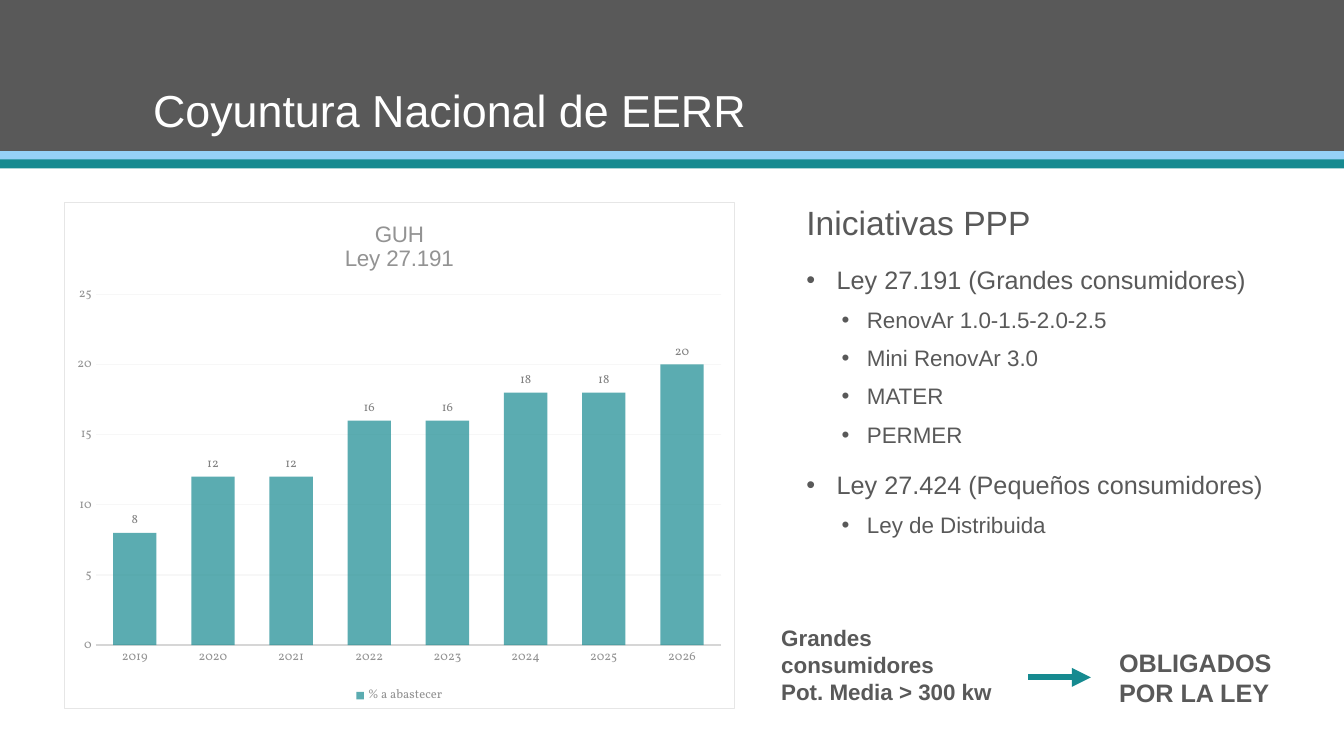
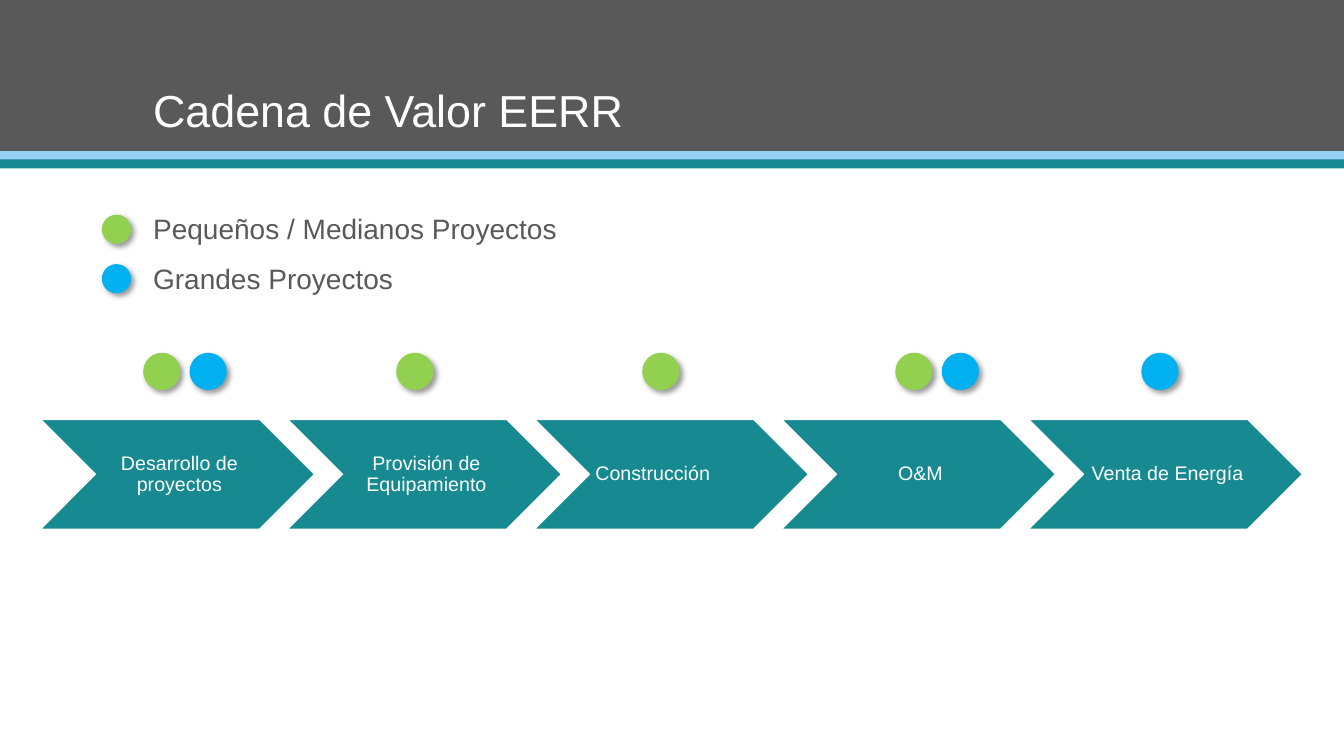
from dataclasses import dataclass

from lxml import etree
from pptx import Presentation
from pptx.chart.data import CategoryChartData
from pptx.dml.color import RGBColor
from pptx.enum import chart as ch, shapes, text
from pptx.oxml.ns import qn
from pptx.util import Inches, Pt


@dataclass(frozen=True)
class Theme:
    gray: str = "595959"
    sky: str = "95D1F7"
    teal: str = "168A90"
    white: str = "FFFFFF"
    green: str = "92D050"
    blue: str = "00B0F0"
    black: str = "000000"
    axis_text: str = "939393"
    label_text: str = "828282"
    axis_line: str = "D6D6D6"
    grid: str = "F7F7F7"
    border: str = "E6E6E6"
    font: str = "Arial"
    chart_font: str = "Vollkorn"
    title: int = 32
    heading: int = 24
    legend: int = 20
    body: int = 18
    detail: int = 16
    step: int = 14
    chart: int = 9


T = Theme()


def rgb(color):
    return RGBColor.from_string(color)


def sub(parent, tag, **attrs):
    return etree.SubElement(parent, qn(tag), {k: str(v) for k, v in attrs.items()})


def style_font(font, size, color, name=T.chart_font, bold=False):
    font.size, font.name, font.bold = Pt(size), name, bold
    font.color.rgb = rgb(color)


def style_line(line, color, width):
    line.color.rgb = rgb(color)
    line.width = Pt(width)


def write(tf, value, size=T.body, color=T.gray, bold=False, align=None,
          spacing=None, before=None, indent=None):
    p = tf.paragraphs[0]
    if p.runs:
        p = tf.add_paragraph()
    p.alignment = align
    p.line_spacing = spacing
    if before is not None:
        p.space_before = Pt(before)
    if indent:
        left, hanging = indent
        pPr = p._p.get_or_add_pPr()
        pPr.set("marL", str(Inches(left)))
        pPr.set("indent", str(Inches(-hanging)))
        sub(pPr, "a:buFont", typeface=T.font)
        sub(pPr, "a:buChar", char="•")
    r = p.add_run()
    r.text = value
    style_font(r.font, size, color, T.font, bold)


class Deck:
    def __init__(self):
        self.prs = Presentation()
        self.prs.slide_width = Inches(13.33)
        self.prs.slide_height = Inches(7.5)
        self.s = None

    def slide(self, title):
        self.s = self.prs.slides.add_slide(self.prs.slide_layouts[6])
        for top, height, color in ((0, 1.5, T.gray), (1.5, 0.09, T.sky),
                                   (1.58, 0.09, T.teal)):
            self.shape(shapes.MSO_SHAPE.RECTANGLE, 0, top, 13.33, height, color)
        tf = self.box(1.42, 0.28, 10.5, 1.13)
        tf.vertical_anchor = text.MSO_ANCHOR.BOTTOM
        write(tf, title, size=T.title, color=T.white, spacing=0.9)

    def shape(self, kind, x, y, w, h, fill, line=None):
        sp = self.s.shapes.add_shape(kind, Inches(x), Inches(y), Inches(w), Inches(h))
        sp.shadow.inherit = False
        sp.fill.solid()
        sp.fill.fore_color.rgb = rgb(fill)
        if line:
            style_line(sp.line, line, 1)
        else:
            sp.line.fill.background()
        return sp

    def box(self, x, y, w, h):
        tf = self.s.shapes.add_textbox(
            Inches(x), Inches(y), Inches(w), Inches(h)).text_frame
        tf.word_wrap = True
        return tf

    def dot(self, x, y, size, color):
        sp = self.shape(shapes.MSO_SHAPE.OVAL, x, y, size, size, color)
        effects = sp._element.spPr.find(qn("a:effectLst"))
        shadow = sub(effects, "a:outerShdw", blurRad=Pt(4), dist=Pt(3),
                     dir=45 * 60000, algn="tl", rotWithShape=0)
        sub(sub(shadow, "a:srgbClr", val=T.black), "a:alpha", val=40000)

    def chevron(self, x, y, w, h, label, align):
        sp = self.shape(shapes.MSO_SHAPE.CHEVRON, x, y, w, h, T.teal, T.white)
        tf = sp.text_frame
        tf.word_wrap = True
        tf.vertical_anchor = text.MSO_ANCHOR.MIDDLE
        tf.margin_left = Inches(0.06)
        tf.margin_right = tf.margin_top = tf.margin_bottom = Inches(0.02)
        write(tf, label, size=T.step, color=T.white, align=align, spacing=0.9)

    def arrow(self, x1, x2, y):
        c = self.s.shapes.add_connector(
            shapes.MSO_CONNECTOR.STRAIGHT, Inches(x1), Inches(y), Inches(x2), Inches(y))
        style_line(c.line, T.teal, 4.5)
        sub(c.line._get_or_add_ln(), "a:tailEnd", type="triangle")
        sub(c._element.spPr, "a:effectLst")

    def columns(self, x, y, w, h, title, name, cats, vals):
        data = CategoryChartData()
        data.categories = cats
        data.add_series(name, vals)
        chart = self.s.shapes.add_chart(
            ch.XL_CHART_TYPE.COLUMN_CLUSTERED, Inches(x), Inches(y),
            Inches(w), Inches(h), data).chart
        style_font(chart.font, 10, T.gray)
        for line in title:
            write(chart.chart_title.text_frame, line, size=T.detail, color=T.axis_text)
        chart.chart_title.include_in_layout = False
        chart.has_legend = True
        chart.legend.position = ch.XL_LEGEND_POSITION.BOTTOM
        chart.legend.include_in_layout = False
        style_font(chart.legend.font, T.chart, T.axis_text)

        for axis in (chart.category_axis, chart.value_axis):
            axis.major_tick_mark = axis.minor_tick_mark = ch.XL_TICK_MARK.NONE
            style_font(axis.tick_labels.font, T.chart, T.axis_text)
        style_line(chart.category_axis.format.line, T.axis_line, 1.25)
        value = chart.value_axis
        value.minimum_scale, value.maximum_scale, value.major_unit = 0, 25, 5
        value.format.line.fill.background()
        style_line(value.major_gridlines.format.line, T.grid, 0.75)

        plot = chart.plots[0]
        plot.gap_width, plot.overlap = 80, 25
        plot.vary_by_categories = False
        series = plot.series[0]
        series.invert_if_negative = False
        series.format.fill.solid()
        series.format.fill.fore_color.rgb = rgb(T.teal)
        color = next(series._element.iter(qn("a:srgbClr")))
        sub(color, "a:alpha", val=70000)
        labels = series.data_labels
        labels.show_value = True
        labels.position = ch.XL_LABEL_POSITION.OUTSIDE_END
        style_font(labels.font, T.chart, T.label_text)

        frame = etree.Element(qn("c:spPr"))
        sub(sub(frame, "a:solidFill"), "a:srgbClr", val=T.white)
        border = sub(frame, "a:ln", w=Pt(0.75))
        sub(sub(border, "a:solidFill"), "a:srgbClr", val=T.border)
        chart.element.find(qn("c:chart")).addnext(frame)


def national_situation(deck):
    deck.slide("Coyuntura Nacional de EERR")
    deck.columns(0.63, 2, 6.66, 5.03, ("GUH", "Ley 27.191"), "% a abastecer",
                 [str(year) for year in range(2019, 2027)],
                 (8, 12, 12, 16, 16, 18, 18, 20))

    tf = deck.box(7.9, 2, 4.97, 3.83)
    write(tf, "Iniciativas PPP", size=T.heading, spacing=0.9, before=18)
    laws = {
        "Ley 27.191 (Grandes consumidores)":
            ("RenovAr 1.0-1.5-2.0-2.5", "Mini RenovAr 3.0", "MATER", "PERMER"),
        "Ley 27.424 (Pequeños consumidores)": ("Ley de Distribuida",),
    }
    for law, programs in laws.items():
        write(tf, law, spacing=0.9, before=18, indent=(0.3, 0.3))
        for program in programs:
            write(tf, program, size=T.detail, spacing=0.9, before=10,
                  indent=(0.6, 0.25))

    tf = deck.box(7.65, 6.14, 2.55, 0.91)
    for line in ("Grandes consumidores", "Pot. Media > 300 kw"):
        write(tf, line, size=T.detail, bold=True)
    deck.arrow(10.2, 10.82, 6.72)
    write(deck.box(11, 6.37, 2.12, 0.71), "OBLIGADOS POR LA LEY", bold=True)


def value_chain(deck):
    deck.slide("Cadena de Valor EERR")
    legend = ((T.green, "Pequeños / Medianos Proyectos"), (T.blue, "Grandes Proyectos"))
    for i, (color, label) in enumerate(legend):
        deck.dot(1.01, 2.13 + 0.49 * i, 0.29, color)
        write(deck.box(1.42, 2.05 + 0.5 * i, 5.57, 0.44), label, size=T.legend)

    center, left = text.PP_ALIGN.CENTER, text.PP_ALIGN.LEFT
    steps = (
        ("Desarrollo de proyectos", center, 1.42, (T.green, T.blue)),
        ("Provisión de Equipamiento", center, 3.93, (T.green,)),
        ("Construcción", left, 6.37, (T.green,)),
        ("O&M", center, 8.88, (T.green, T.blue)),
        ("Venta de Energía", center, 11.32, (T.blue,)),
    )
    for i, (label, align, dot_x, colors) in enumerate(steps):
        deck.chevron(0.4 + 2.45 * i, 4.16, 2.72, 1.09, label, align)
        for j, color in enumerate(colors):
            deck.dot(dot_x + 0.46 * j, 3.5, 0.37, color)


def main():
    deck = Deck()
    national_situation(deck)
    value_chain(deck)
    deck.prs.save("out.pptx")


if __name__ == "__main__":
    main()
